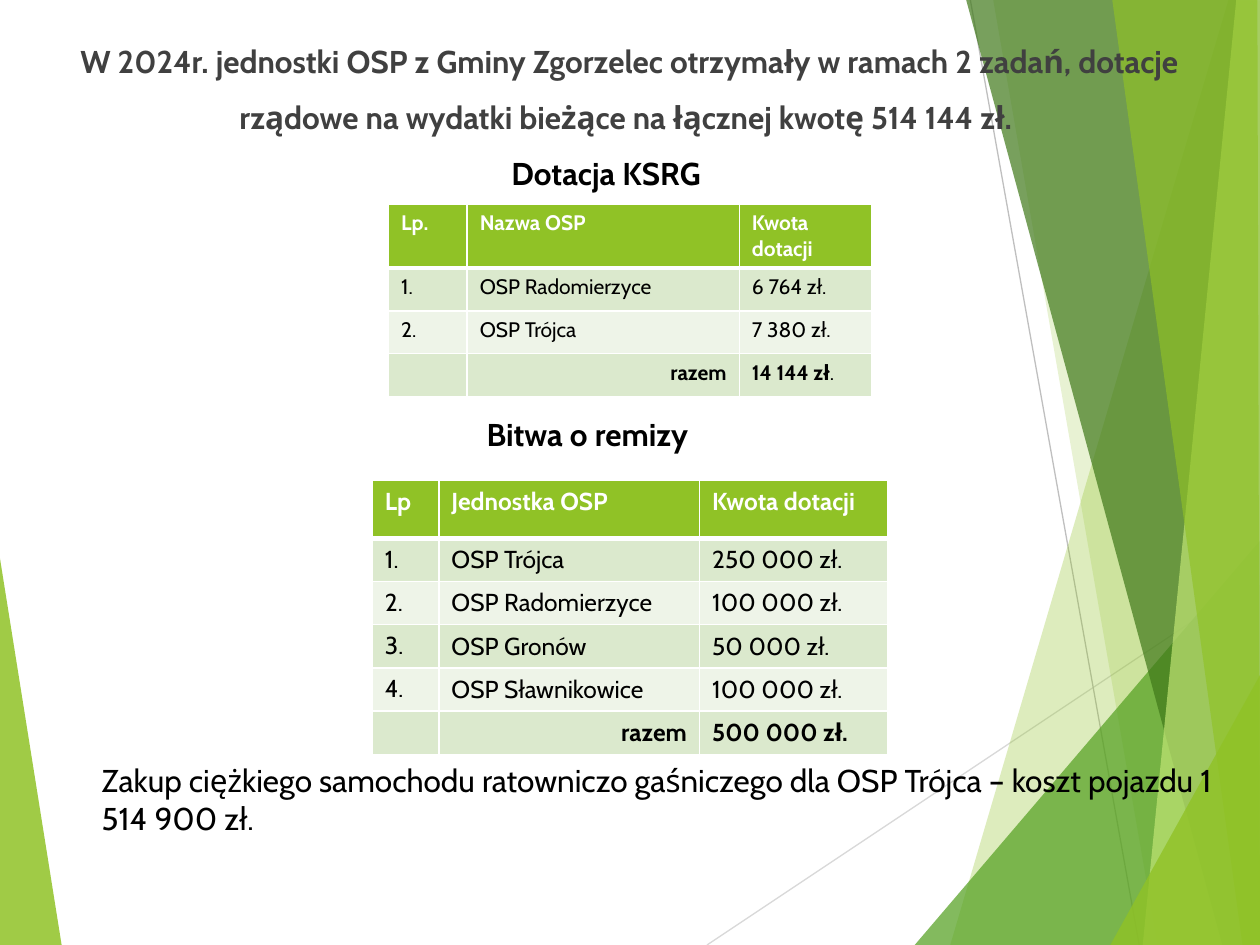
import pptx
import pptx.dml.color
import pptx.enum.text
import pptx.oxml
import pptx.oxml.ns
import pptx.util
import lxml.etree

Pt = pptx.util.Pt
ALIGN = pptx.enum.text.PP_ALIGN
ANCHOR = pptx.enum.text.MSO_ANCHOR
qn = pptx.oxml.ns.qn

COLORS = {
    "lime": "90C226",
    "green": "54A021",
    "dark_green": "3F7819",
    "pale_lime": "C0E474",
    "light_gray": "D9D9D9",
    "gray": "BFBFBF",
    "heading": "404040",
    "text": "000000",
    "white": "FFFFFF",
    "band_dark": "DBE9CD",
    "band_light": "EEF4E8",
}


def add_span(para, text, size, color, bold=False):
    span = para.add_run()
    span.text = text
    span.font.name = "Cabin"
    span.font.size = Pt(size)
    span.font.bold = bold
    span.font.color.rgb = pptx.dml.color.RGBColor.from_string(COLORS[color])


def add_table(left, top, widths, heights, rows, size, body_anchor):
    frame = page.shapes.add_table(
        len(rows), len(widths), Pt(left), Pt(top), Pt(sum(widths)), Pt(sum(heights))
    )
    table = frame.table
    for column, width in zip(table.columns, widths):
        column.width = Pt(width)
    for row_index, values in enumerate(rows):
        table.rows[row_index].height = Pt(heights[row_index])
        header = row_index == 0
        total = row_index == len(rows) - 1
        band = "lime" if header else "band_dark" if row_index % 2 else "band_light"
        for column_index, value in enumerate(values):
            cell = table.cell(row_index, column_index)
            cell.fill.solid()
            cell.fill.fore_color.rgb = pptx.dml.color.RGBColor.from_string(COLORS[band])
            if column_index and not header:
                cell.vertical_anchor = body_anchor
            para = cell.text_frame.paragraphs[0]
            if total and column_index == 1:
                para.alignment = ALIGN.RIGHT
            if not value:
                para._p.get_or_add_endParaRPr().set("sz", str(size * 100))
            for text, bold in value if isinstance(value, list) else [(value, header or total)]:
                if text:
                    add_span(para, text, size, "white" if header else "text", bold)
            edges = {"lnL": 1, "lnR": 1, "lnT": 3 if row_index == 1 else 1, "lnB": 3 if header else 1}
            properties = cell._tc.get_or_add_tcPr()
            for position, (edge, width) in enumerate(edges.items()):
                border = lxml.etree.Element(qn("a:" + edge), w=str(Pt(width)))
                fill = lxml.etree.SubElement(border, qn("a:solidFill"))
                lxml.etree.SubElement(fill, qn("a:srgbClr"), val=COLORS["white"])
                properties.insert(position, border)


deck = pptx.Presentation()
deck.slide_width = Pt(720)
deck.slide_height = Pt(540)
page = deck.slides.add_slide(deck.slide_layouts[1])
title = page.shapes.title
title._element.getparent().remove(title._element)

facets = [
    ("lime", 85, [(-0.5, 316), (35.3, 540.5), (-0.5, 540)]),
    ("lime", 30, [(702, 0), (543, 540), (721, 540.5), (720.5, 0.5)]),
    ("lime", 20, [(567.5, -0.5), (661.5, 540), (720.5, 540), (720.5, -0.5)]),
    ("green", 72, [(522.7, 540), (720, 309), (720.5, 540)]),
    ("dark_green", 70, [(552, -0.5), (698.5, 540), (720.5, 540), (720.5, -0.5)]),
    ("pale_lime", 70, [(706.5, -0.5), (653, 540), (720.5, 540), (720, -0.5)]),
    ("lime", 65, [(635.5, -0.5), (710, 540), (720, 540), (718.5, -0.5)]),
    ("lime", 80, [(634.5, 540), (720.5, 385), (720.5, 540)]),
]
rays = [("light_gray", 404, 540, 720.5, 329), ("gray", 554.5, 0, 651, 540)]

for index, (color, opacity, corners) in enumerate(facets):
    points = [(Pt(x), Pt(y)) for x, y in corners]
    builder = page.shapes.build_freeform(*points[0])
    builder.add_line_segments(points[1:], close=True)
    facet = builder.convert_to_shape()
    facet.shadow.inherit = False
    facet.line.fill.background()
    facet.fill.solid()
    facet.fill.fore_color.rgb = pptx.dml.color.RGBColor.from_string(COLORS[color])
    tint = facet._element.spPr.find(qn("a:solidFill"))[0]
    lxml.etree.SubElement(tint, qn("a:alpha"), val=str(opacity * 1000))
    if index == 0:
        for ray_color, x1, y1, x2, y2 in rays:
            ray = page.shapes.add_connector(1, Pt(x1), Pt(y1), Pt(x2), Pt(y2))
            ray.line.width = Pt(0.75)
            ray.line.color.rgb = pptx.dml.color.RGBColor.from_string(COLORS[ray_color])
            lxml.etree.SubElement(ray._element.spPr, qn("a:effectLst"))

body = page.placeholders[1]
body.left, body.top, body.width, body.height = Pt(25.2), Pt(9.4), Pt(669), Pt(73.4)
page.shapes._spTree.append(body._element)
body.text_frame.auto_size = pptx.enum.text.MSO_AUTO_SIZE.NONE
body.text_frame.vertical_anchor = ANCHOR.TOP
para = body.text_frame.paragraphs[0]
para.alignment = ALIGN.CENTER
para.line_spacing = 1.5
para.space_before = Pt(10)
properties = para._p.get_or_add_pPr()
properties.set("marL", "0")
properties.set("indent", "0")
lxml.etree.SubElement(properties, qn("a:buNone"))
add_span(
    para,
    "W 2024r. jednostki OSP z Gminy Zgorzelec otrzymały w ramach 2 zadań, dotacje "
    "rządowe na wydatki bieżące na łącznej kwotę 514 144 zł. ",
    18, "heading", True,
)

add_table(
    222, 116.6, [45, 155.5, 75.5], [36.4] + [24.5] * 3,
    [
        ["Lp.", "Nazwa OSP", "Kwota dotacji"],
        ["1.", "OSP Radomierzyce", "6 764 zł."],
        ["2.", "OSP Trójca", "7 380 zł."],
        ["", "razem", [("14 144 zł", True), (".", False)]],
    ],
    12, ANCHOR.TOP,
)
add_table(
    212.8, 274.6, [38, 149, 107.5], [33] + [24.7] * 5,
    [
        ["Lp", "Jednostka OSP", "Kwota dotacji"],
        ["1.", "OSP Trójca", "250 000 zł."],
        ["2.", "OSP Radomierzyce", "100 000 zł."],
        ["3.", "OSP Gronów", "50 000 zł."],
        ["4.", "OSP Sławnikowice", "100 000 zł."],
        ["", "razem", "500 000 zł."],
    ],
    14, ANCHOR.MIDDLE,
)

captions = [
    ("Dotacja KSRG", 285.2, 88.6, 182, 43, 0.8, 7.5, True),
    ("Bitwa o remizy", 271, 237.6, 210, 43, 0.8, 7.5, True),
    (
        "Zakup ciężkiego samochodu ratowniczo gaśniczego dla OSP Trójca – koszt pojazdu 1 514 900 zł.",
        51, 431.5, 669, 51, 1, 0, False,
    ),
]
for text, left, top, width, height, spacing, before, bold in captions:
    box = page.shapes.add_textbox(Pt(left), Pt(top), Pt(width), Pt(height))
    box.text_frame.word_wrap = True
    para = box.text_frame.paragraphs[0]
    para.line_spacing = spacing
    para.space_before = Pt(before)
    add_span(para, text, 18, "text", bold)

deck.save("out.pptx")
